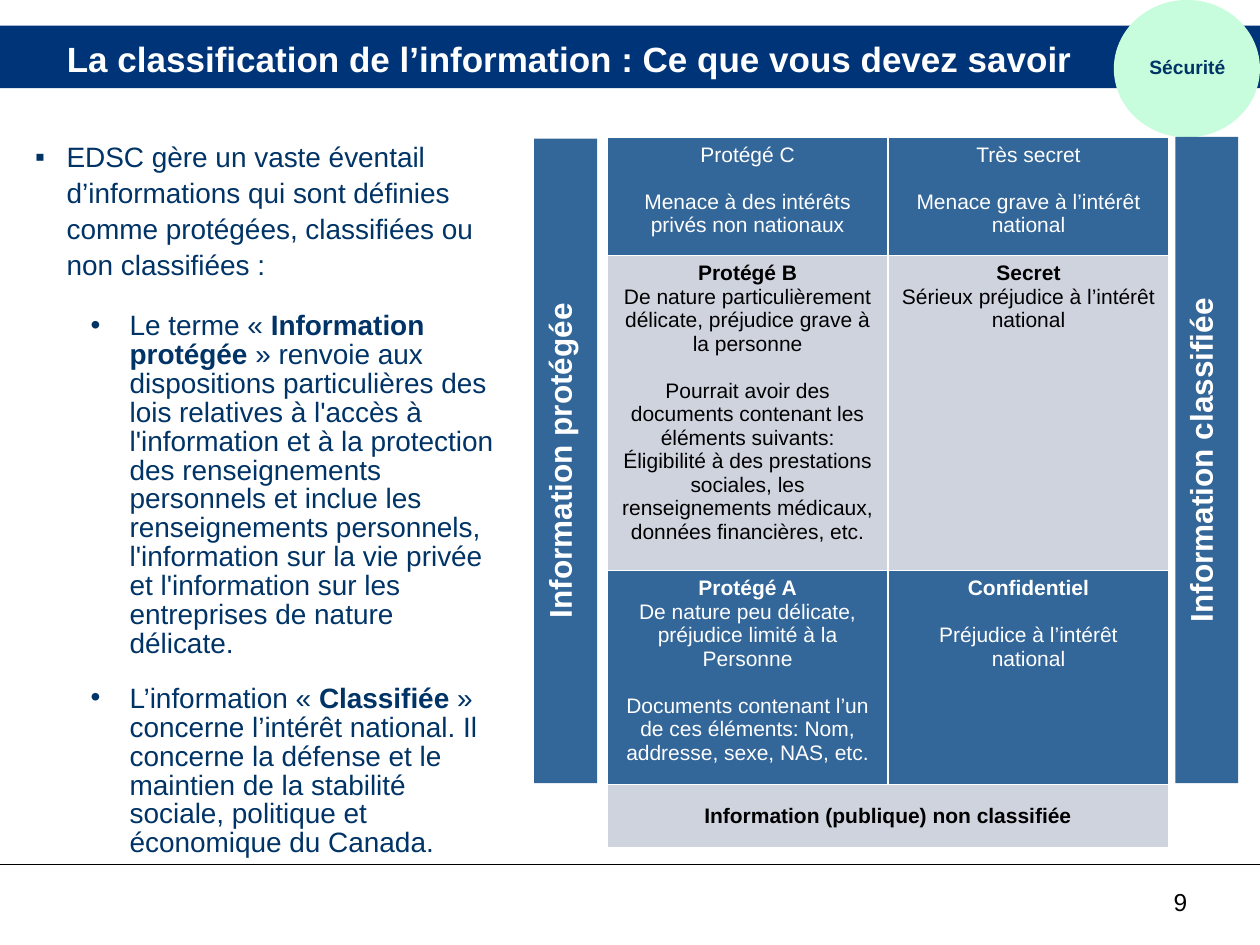
import pptx
import pptx.dml.color
import pptx.enum.shapes
import pptx.enum.text
import pptx.oxml
import pptx.oxml.ns
import pptx.util

Pt = pptx.util.Pt
ALIGN = pptx.enum.text.PP_ALIGN
ANCHOR = pptx.enum.text.MSO_ANCHOR
SHAPE = pptx.enum.shapes.MSO_SHAPE

COLORS = {"band": "003478", "navy": "003366", "blue": "336699", "grey": "CED3DE",
          "mint": "C7FDDC", "white": "FFFFFF", "black": "000000"}
TABLE_GAP = 13.4  # one line of 12-point table text

# Each table paragraph: text, bold, space before
TABLE = [
    ("blue", "white", 67.7, [
        [("Protégé C", False, 0),
         ("Menace à des intérêts privés non nationaux", False, TABLE_GAP)],
        [("Très secret", False, 0),
         ("Menace grave à l’intérêt national", False, TABLE_GAP)]]),
    ("grey", "black", 180, [
        [("Protégé B", True, 0),
         ("De nature particulièrement délicate, préjudice grave à la personne", False, 0),
         ("Pourrait avoir des documents contenant les éléments suivants: Éligibilité à des "
          "prestations sociales, les renseignements médicaux, données financières, etc.",
          False, TABLE_GAP)],
        [("Secret", True, 0),
         ("Sérieux préjudice à l’intérêt national", False, 0)]]),
    ("blue", "white", 122.4, [
        [("Protégé A", True, 0),
         ("De nature peu délicate, préjudice limité à la", False, 0),
         ("Personne", False, 0),
         ("Documents contenant l’un de ces éléments: Nom, addresse, sexe, NAS, etc.",
          False, TABLE_GAP)],
        [("Confidentiel", True, 0),
         ("Préjudice à l’intérêt national", False, TABLE_GAP)]]),
    ("grey", "black", 36, [
        [("Information (publique) non classifiée", True, 0)]]),
]

INTRODUCTION = [("EDSC gère un vaste éventail d’informations qui sont définies comme "
                 "protégées, classifiées ou non classifiées :", False)]
DEFINITIONS = [
    [("Le terme « ", False), ("Information protégée", True),
     (" » renvoie aux dispositions particulières des lois relatives à l'accès à "
      "l'information et à la protection des renseignements personnels et inclue les "
      "renseignements personnels, l'information sur la vie privée et l'information sur "
      "les entreprises de nature délicate.", False)],
    [("L’information « ", False), ("Classifiée ", True),
     ("» concerne l’intérêt national. Il concerne la défense et le maintien de la "
      "stabilité sociale, politique et économique du Canada.", False)],
]


def rgb(name):
    return pptx.dml.color.RGBColor.from_string(COLORS[name])


def add_xml(parent, tag, content="", attributes=""):
    namespace = pptx.oxml.ns.nsdecls("a")
    parent.append(pptx.oxml.parse_xml(
        f"<a:{tag} {namespace} {attributes}>{content}</a:{tag}>"))


class SlideBuilder:
    def __init__(self, slide, font="Arial"):
        self.slide = slide
        self.font = font

    def format(self, paragraph, size, color, bold=None, align=ALIGN.LEFT):
        paragraph.alignment = align
        for run in paragraph.runs:
            run.font.name = self.font
            run.font.size = Pt(size)
            run.font.color.rgb = rgb(color)
            if bold is not None:
                run.font.bold = bold

    def title(self, text, box, size, color):
        title = self.slide.shapes.title
        title.left, title.top, title.width, title.height = map(Pt, box)
        title.text_frame.text = text
        title.text_frame.vertical_anchor = ANCHOR.MIDDLE
        self.format(title.text_frame.paragraphs[0], size, color, True)
        # Bring the title in front of the band
        title.element.getparent().append(title.element)

    def shape(self, kind, box, fill):
        shape = self.slide.shapes.add_shape(kind, *map(Pt, box))
        shape.shadow.inherit = False
        shape.fill.solid()
        shape.fill.fore_color.rgb = rgb(fill)
        shape.line.fill.background()
        return shape

    def side_bar(self, text, box):
        """Rectangle whose text reads upwards."""
        bar = self.shape(SHAPE.RECTANGLE, box, "blue")
        bar.text_frame.text = text
        bar.text_frame.vertical_anchor = ANCHOR.TOP
        bar.element.txBody.bodyPr.set("vert", "vert270")
        self.format(bar.text_frame.paragraphs[0], 18, "white", True, ALIGN.CENTER)

    def text(self, text, box, size, color, bold, align):
        text_box = self.slide.shapes.add_textbox(*map(Pt, box))
        text_box.text_frame.word_wrap = True
        text_box.text_frame.text = text
        self.format(text_box.text_frame.paragraphs[0], size, color, bold, align)
        return text_box

    def badge(self, text, circle_box, text_box):
        circle = self.shape(SHAPE.OVAL, circle_box, "mint")
        label = self.text(text, text_box, 11, "navy", True, ALIGN.CENTER)
        self.slide.shapes.add_group_shape([circle, label])

    def rule(self, y, width):
        line = self.slide.shapes.add_connector(
            pptx.enum.shapes.MSO_CONNECTOR.STRAIGHT, 0, Pt(y), Pt(width), Pt(y))
        line.line.color.rgb = rgb("black")
        line.line.width = Pt(0.5)
        add_xml(line.element.spPr, "effectLst")

    def bullet(self, paragraph, pieces, symbol, level, margin, hanging, spacing, before, after):
        for text, bold in pieces:
            run = paragraph.add_run()
            run.text = text
            run.font.bold = bold
        self.format(paragraph, 16, "navy")
        paragraph.level = level
        paragraph.line_spacing = spacing
        paragraph.space_before, paragraph.space_after = Pt(before), Pt(after)
        properties = paragraph._p.get_or_add_pPr()
        properties.set("marL", str(Pt(margin)))
        properties.set("indent", str(-Pt(hanging)))
        add_xml(properties, "buClr", f'<a:srgbClr val="{COLORS["navy"]}"/>')
        add_xml(properties, "buFont", attributes=f'typeface="{self.font}"')
        add_xml(properties, "buChar", attributes=f'char="{symbol}"')

    def body(self, box):
        text_frame = self.slide.shapes.add_textbox(*map(Pt, box)).text_frame
        text_frame.word_wrap = True
        self.bullet(text_frame.paragraphs[0], INTRODUCTION, "▪", 0, 18, 18, 1.07, 6, 6)
        for pieces in DEFINITIONS:
            self.bullet(text_frame.add_paragraph(), pieces, "•", 1, 54, 22.3, 0.86, 12, 3)

    def cell(self, cell, paragraphs, fill, color):
        cell.fill.solid()
        cell.fill.fore_color.rgb = rgb(fill)
        cell.text_frame.text = "\n".join(text for text, _, _ in paragraphs)
        for paragraph, (_, bold, before) in zip(cell.text_frame.paragraphs, paragraphs):
            self.format(paragraph, 12, color, bold, ALIGN.CENTER)
            paragraph.space_before = Pt(before)

    def borders(self, cell):
        properties = cell._tc.get_or_add_tcPr()
        for position, side in enumerate("LRTB"):
            add_xml(properties, f"ln{side}",
                    f'<a:solidFill><a:srgbClr val="{COLORS["white"]}"/></a:solidFill>',
                    f'w="{Pt(1)}"')
            properties.insert(position, properties[-1])

    def table(self, left, top, column_width):
        height = sum(row[2] for row in TABLE)
        table = self.slide.shapes.add_table(
            len(TABLE), 2, Pt(left), Pt(top), Pt(2 * column_width), Pt(height)).table
        for index, (fill, color, row_height, cells) in enumerate(TABLE):
            table.rows[index].height = Pt(row_height)
            for column, paragraphs in enumerate(cells):
                self.cell(table.cell(index, column), paragraphs, fill, color)
        last = len(TABLE) - 1
        table.cell(last, 0).merge(table.cell(last, 1))
        table.cell(last, 0).vertical_anchor = ANCHOR.MIDDLE
        for cell in table.iter_cells():
            self.borders(cell)


def main():
    presentation = pptx.Presentation()
    presentation.slide_width, presentation.slide_height = Pt(720), Pt(540)
    builder = SlideBuilder(presentation.slides.add_slide(presentation.slide_layouts[5]))
    builder.shape(SHAPE.RECTANGLE, (0, 14.6, 720, 35.8), "band")
    builder.text("9", (535.7, 503.3, 149.8, 20.9), 14, "black", False, ALIGN.RIGHT)
    builder.rule(493.9, 720)
    builder.title("La classification de l’information : Ce que vous devez savoir",
                  (31, 16.6, 657.4, 33.8), 20, "white")
    builder.body((13, 75, 278.6, 402.5))
    builder.badge("Sécurité", (636.5, 0, 83.5, 78.5), (623.5, 28, 110, 21))
    builder.table(347, 78.3, 160.5)
    builder.side_bar("Information protégée", (305.2, 79.2, 36, 368.4))
    builder.side_bar("Information classifiée", (671.6, 78.3, 36, 369.3))
    presentation.save("out.pptx")


if __name__ == "__main__":
    main()
